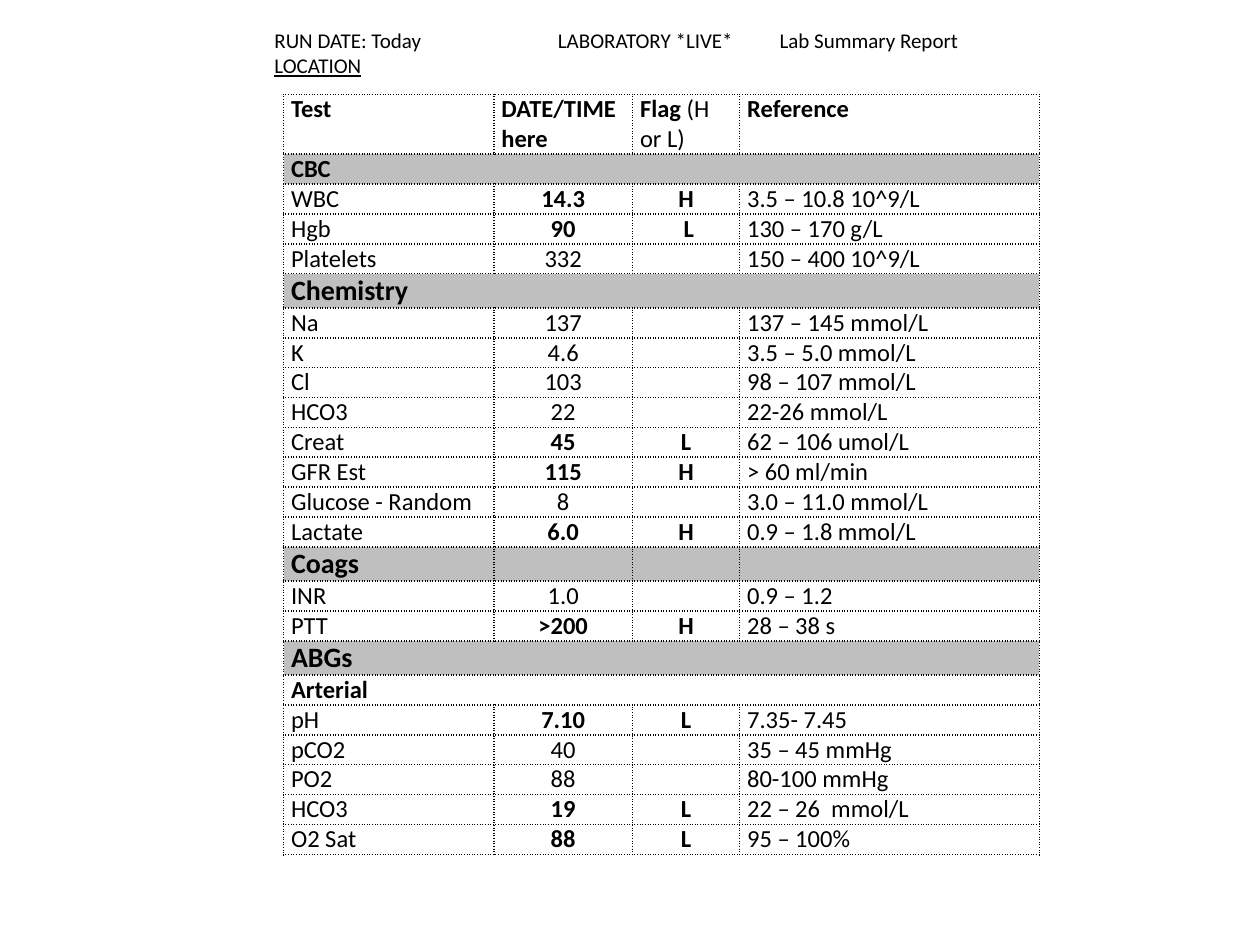
from lxml import etree
from pptx import Presentation
from pptx.dml.color import RGBColor
from pptx.enum.text import MSO_ANCHOR, MSO_AUTO_SIZE, PP_ALIGN
from pptx.oxml.ns import qn
from pptx.util import Inches, Pt

CENTER = PP_ALIGN.CENTER
TOP = MSO_ANCHOR.TOP
GROW = MSO_AUTO_SIZE.SHAPE_TO_FIT_TEXT
FONT, INK, GREY, WHITE = "Calibri", "000000", "BFBFBF", "FFFFFF"
COLS = (1.67, 1.1, 0.85, 2.38)
ROW = 0.16

# One-item rows are bands: (name, size, fill, merged)
BANDS = {
    "CBC": (14, GREY, True),
    "Chemistry": (16, GREY, True),
    "Coags": (16, GREY, False),
    "ABGs": (16, GREY, True),
    "Arterial": (14, None, True),
}
# Test, value, flag, reference
ROWS = [
    ("CBC",),
    ("WBC", "14.3", "H", "3.5 – 10.8 10^9/L"),
    ("Hgb", "90", " L", "130 – 170 g/L"),
    ("Platelets", "332", "", "150 – 400 10^9/L"),
    ("Chemistry",),
    ("Na", "137", "", "137 – 145 mmol/L"),
    ("K", "4.6", "", "3.5 – 5.0 mmol/L"),
    ("Cl", "103", "", "98 – 107 mmol/L"),
    ("HCO3", "22", "", "22-26 mmol/L"),
    ("Creat", "45", "L", "62 – 106 umol/L"),
    ("GFR Est", "115", "H", "> 60 ml/min"),
    ("Glucose - Random", "8", "", "3.0 – 11.0 mmol/L"),
    ("Lactate", "6.0", "H", "0.9 – 1.8 mmol/L"),
    ("Coags",),
    ("INR", "1.0", "", "0.9 – 1.2"),
    ("PTT", ">200", "H", "28 – 38 s"),
    ("ABGs",),
    ("Arterial",),
    ("pH", "7.10", "L", "7.35- 7.45"),
    ("pCO2", "40", "", "35 – 45 mmHg"),
    ("PO2", "88", "", "80-100 mmHg"),
    ("HCO3", "19", "L", "22 – 26  mmol/L"),
    ("O2 Sat", "88", "L", "95 – 100%"),
]


def color(code):
    return RGBColor.from_string(code)


def style(run, size, bold=False):
    font = run.font
    font.name, font.size, font.bold = FONT, Pt(size), bold
    font.color.rgb = color(INK)


def border(cell):
    """Dotted lines on all four sides, placed ahead of the fill."""
    props = cell._tc.get_or_add_tcPr()
    for i, side in enumerate(("lnL", "lnR", "lnT", "lnB")):
        line = etree.Element(qn("a:" + side), w=str(Pt(1)))
        fill = etree.SubElement(line, qn("a:solidFill"))
        etree.SubElement(fill, qn("a:srgbClr"), val=INK)
        etree.SubElement(line, qn("a:prstDash"), val="dot")
        props.insert(i, line)


def fill_cell(cell, text="", size=14, bold=False, fill=None, mid=False):
    cell.margin_left = cell.margin_right = Inches(0.06)
    cell.margin_top = cell.margin_bottom = 0
    cell.vertical_anchor = TOP
    if fill:
        cell.fill.solid()
        cell.fill.fore_color.rgb = color(fill)
    else:
        cell.fill.background()
    border(cell)
    para = cell.text_frame.paragraphs[0]
    para.text = text
    if mid:
        para.alignment = CENTER
    for run in para.runs:
        style(run, size, bold)
    if not text:  # keeps empty cells from stretching the row
        etree.SubElement(para._p, qn("a:endParaRPr"), sz=str(size * 100))


def add_head(slide):
    box = slide.shapes.add_textbox(
        Inches(2.08), Inches(0.17), Inches(6.67), Inches(0.5))
    frame = box.text_frame
    frame.word_wrap = True
    frame.auto_size = GROW
    frame.text = "RUN DATE: Today\tLABORATORY *LIVE*\tLab Summary Report\nLOCATION"
    top, place = frame.paragraphs
    tabs = etree.SubElement(top._p.get_or_add_pPr(), qn("a:tabLst"))
    for stop in (2.25, 4.01):
        etree.SubElement(tabs, qn("a:tab"), pos=str(Inches(stop)), algn="l")
    for run in top.runs + place.runs:
        style(run, 12)
    place.runs[0].font.underline = True


def add_labs(slide):
    frame = slide.shapes.add_table(
        len(ROWS) + 1, len(COLS), Inches(2.25), Inches(0.75),
        Inches(sum(COLS)), Inches(5.97))
    table = frame.table
    table.first_row = table.horz_banding = False
    for col, width in zip(table.columns, COLS):
        col.width = Inches(width)
    for row in table.rows:
        row.height = Inches(ROW)
    frame.height = Inches(5.97)

    # Column heads
    heads = ("Test", "DATE/TIME here", "Flag ", "Reference")
    for i, text in enumerate(heads):
        fill_cell(table.cell(0, i), text, bold=True, fill=WHITE)
    note = table.cell(0, 2).text_frame.paragraphs[0].add_run()
    note.text = "(H or L)"
    style(note, 14)

    # Bands and results; a flagged result is bold
    last = len(COLS) - 1
    for r, items in enumerate(ROWS, 1):
        cells = [table.cell(r, c) for c in range(len(COLS))]
        if len(items) == 1:
            size, fill, merged = BANDS[items[0]]
            for cell, text in zip(cells, items + ("",) * last):
                fill_cell(cell, text, size if text else 14, True, fill)
            if merged:
                cells[0].merge(cells[last])
        else:
            for c, (cell, text) in enumerate(zip(cells, items)):
                mid = c in (1, 2)
                fill_cell(cell, text, bold=mid and bool(items[2]), mid=mid)


def main():
    deck = Presentation()
    deck.slide_width, deck.slide_height = Inches(10), Inches(7.5)
    slide = deck.slides.add_slide(deck.slide_layouts[6])
    add_labs(slide)
    add_head(slide)
    deck.save("out.pptx")


if __name__ == "__main__":
    main()
